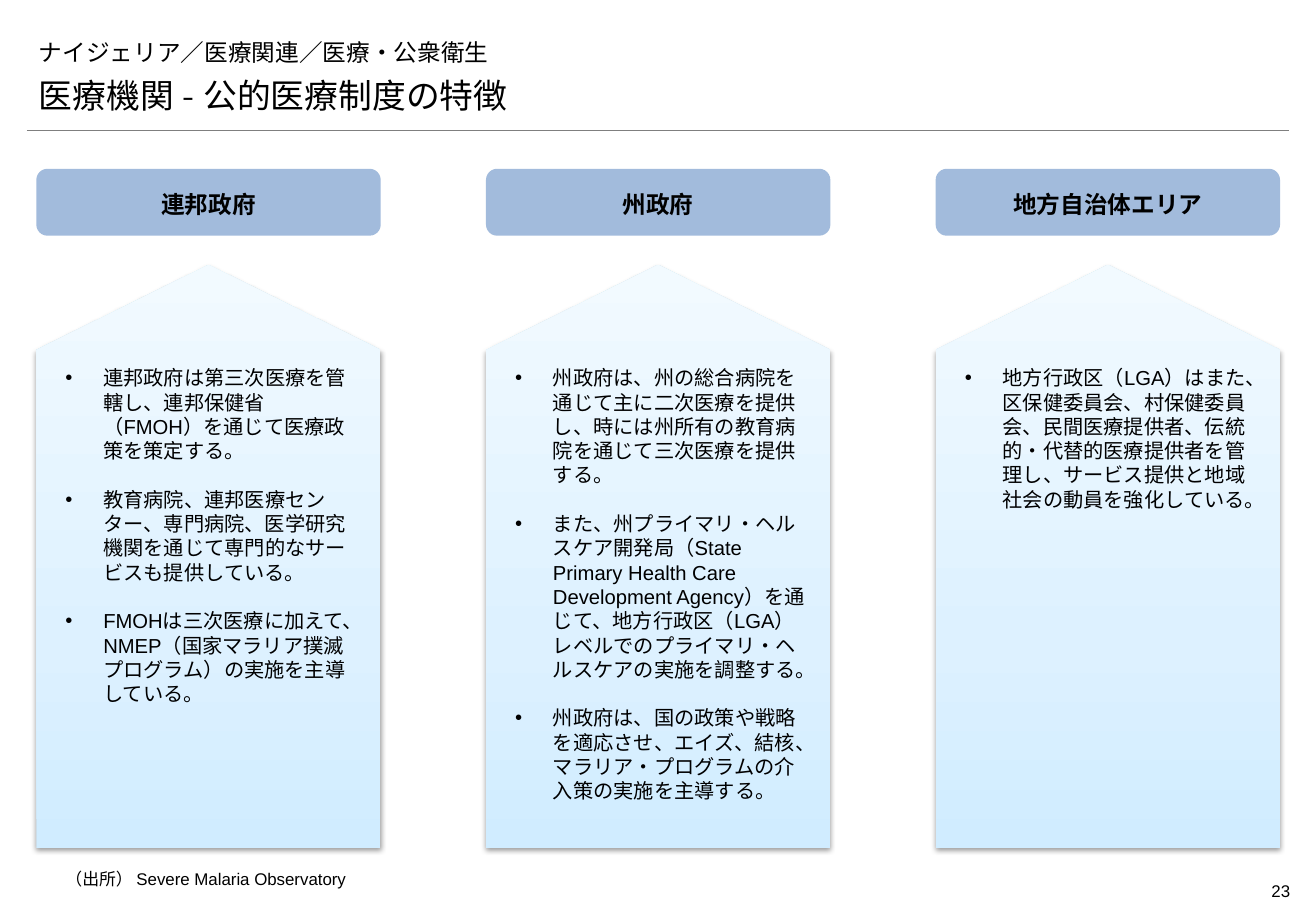
from copy import deepcopy
from lxml.etree import SubElement
from pptx import Presentation
from pptx.dml.color import RGBColor
from pptx.enum.shapes import MSO_CONNECTOR as Connector, MSO_SHAPE as Preset
from pptx.enum.text import MSO_ANCHOR as Anchor, MSO_AUTO_SIZE as AutoSize, PP_ALIGN as Align
from pptx.oxml.ns import qn
from pptx.util import Cm, Pt

BLACK = RGBColor(0x00, 0x00, 0x00)
GREY = RGBColor(0x7F, 0x7F, 0x7F)
HEADER_BLUE = RGBColor(0xA2, 0xBB, 0xDC)
ARROW_STOPS = [
    (0, RGBColor(0xD0, 0xEC, 0xFF)),
    (0.35, RGBColor(0xDD, 0xF1, 0xFF)),
    (1, RGBColor(0xF2, 0xFA, 0xFF)),
]

COLUMNS = [
    ("連邦政府", [
        "連邦政府は第三次医療を管轄し、連邦保健省（FMOH）を通じて医療政策を策定する。",
        "教育病院、連邦医療センター、専門病院、医学研究機関を通じて専門的なサービスも提供している。",
        "FMOHは三次医療に加えて、NMEP（国家マラリア撲滅プログラム）の実施を主導している。",
    ]),
    ("州政府", [
        "州政府は、州の総合病院を通じて主に二次医療を提供し、時には州所有の教育病院を通じて三次医療を提供する。",
        "また、州プライマリ・ヘルスケア開発局（State Primary Health Care Development Agency）を通じて、"
        "地方行政区（LGA）レベルでのプライマリ・ヘルスケアの実施を調整する。",
        "州政府は、国の政策や戦略を適応させ、エイズ、結核、マラリア・プログラムの介入策の実施を主導する。",
    ]),
    ("地方自治体エリア", [
        "地方行政区（LGA）はまた、区保健委員会、村保健委員会、民間医療提供者、伝統的・代替的医療提供者を管理し、"
        "サービス提供と地域社会の動員を強化している。",
    ]),
]


def write(para, text, size, font="Arial", align=Align.LEFT, bold=False):
    para.text = text
    para.alignment = align
    para.font.name = font
    para.font.size = Pt(size)
    para.font.bold = bold
    para.font.color.rgb = BLACK


def add_text_box(page, left, top, width, height, anchor=Anchor.TOP):
    box = page.shapes.add_textbox(Cm(left), Cm(top), Cm(width), Cm(height))
    box.text_frame.word_wrap = True
    box.text_frame.vertical_anchor = anchor
    return box.text_frame


deck = Presentation()
deck.slide_width = Cm(27.51)
deck.slide_height = Cm(19.05)
page = deck.slides.add_slide(deck.slide_layouts[5])

title = page.shapes.title
title.left, title.top, title.width, title.height = Cm(0.56), Cm(0.66), Cm(26.39), Cm(0.86)
title.text_frame.vertical_anchor = Anchor.BOTTOM
title.text_frame.auto_size = AutoSize.NONE
write(title.text_frame.paragraphs[0], "ナイジェリア／医療関連／医療・公衆衛生", 14, "Montserrat")

subtitle = add_text_box(page, 0.56, 1.42, 26.42, 1.12, Anchor.BOTTOM)
write(subtitle.paragraphs[0], "医療機関 - 公的医療制度の特徴", 20, "Montserrat")

rule = page.shapes.add_connector(Connector.STRAIGHT, Cm(0.56), Cm(2.72), Cm(26.95), Cm(2.72))
rule.line.color.rgb = GREY
rule.line.width = Pt(0.25)
SubElement(rule._element.spPr, qn("a:effectLst"))

COLUMN_WIDTH = 7.2
COLUMN_PITCH = 9.4
ARROW_TIP, ARROW_SHOULDER, ARROW_BASE = 5.54, 7.32, 17.73

for index, (heading, points) in enumerate(COLUMNS):
    left = 0.76 + index * COLUMN_PITCH
    right = left + COLUMN_WIDTH

    header = page.shapes.add_shape(
        Preset.ROUNDED_RECTANGLE, Cm(left), Cm(3.53), Cm(COLUMN_WIDTH), Cm(1.4))
    header.shadow.inherit = False
    header.fill.solid()
    header.fill.fore_color.rgb = HEADER_BLUE
    header.line.fill.background()
    header.text_frame.vertical_anchor = Anchor.MIDDLE
    para = header.text_frame.paragraphs[0]
    para.line_spacing = 1.14
    para.space_after = Pt(4)
    write(para, heading, 14, align=Align.CENTER, bold=True)

    outline = page.shapes.build_freeform(Cm(left + COLUMN_WIDTH / 2), Cm(ARROW_TIP))
    outline.add_line_segments([
        (Cm(right), Cm(ARROW_SHOULDER)),
        (Cm(right), Cm(ARROW_BASE)),
        (Cm(left), Cm(ARROW_BASE)),
        (Cm(left), Cm(ARROW_SHOULDER)),
    ])
    arrow = outline.convert_to_shape()
    arrow.line.fill.background()
    arrow.fill.gradient()
    arrow.fill.gradient_angle = 90
    stop_list = arrow._element.spPr.find(qn("a:gradFill")).find(qn("a:gsLst"))
    stop_list.append(deepcopy(stop_list[0]))
    for stop, (position, color) in zip(arrow.fill.gradient_stops, ARROW_STOPS):
        stop.position = position
        stop.color.rgb = color
    arrow.shadow.inherit = False
    effects = arrow._element.spPr.find(qn("a:effectLst"))
    shadow = SubElement(effects, qn("a:outerShdw"), blurRad="40000", dist="20000",
                        dir="5400000", rotWithShape="0")
    shadow_color = SubElement(shadow, qn("a:srgbClr"), val="000000")
    SubElement(shadow_color, qn("a:alpha"), val="38000")

    body = add_text_box(page, left + 0.36, 7.52, 6.65, 9)
    for number, point in enumerate(points):
        para = body.add_paragraph() if number else body.paragraphs[0]
        properties = para._p.get_or_add_pPr()
        properties.set("marL", str(Cm(0.79)))
        properties.set("indent", str(-Cm(0.79)))
        if number:
            para.space_before = Pt(14.4)
        SubElement(properties, qn("a:buFont"), typeface="Arial")
        SubElement(properties, qn("a:buChar"), char="•")
        write(para, point, 12)

source = add_text_box(page, 1.12, 18.03, 25.96, 0.69)
write(source.paragraphs[0], "（出所） Severe Malaria Observatory", 10)

page_number = add_text_box(page, 24.97, 18.29, 2, 0.69)
page_number.margin_left = page_number.margin_right = 0
write(page_number.paragraphs[0], "23", 10, align=Align.RIGHT)

deck.save("out.pptx")
